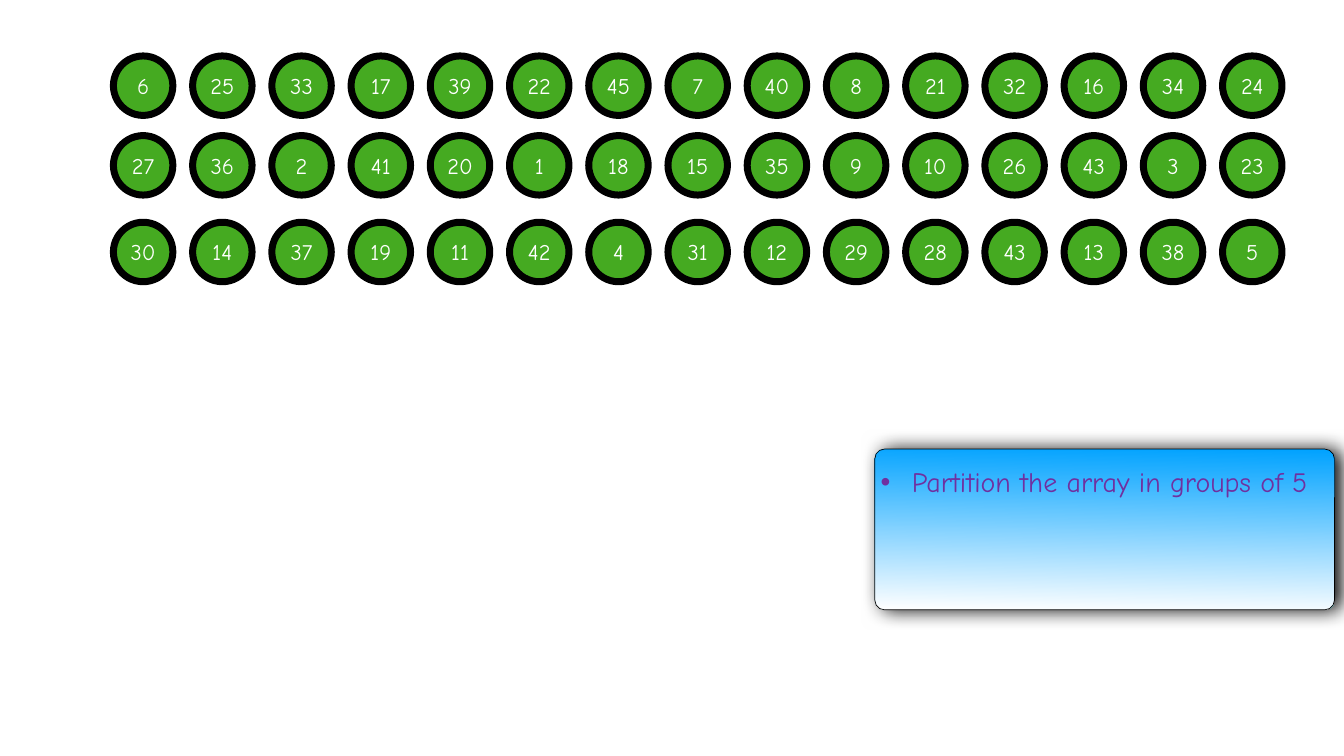
from lxml.etree import SubElement
from pptx import Presentation
from pptx.dml.color import RGBColor
from pptx.enum.shapes import MSO_SHAPE
from pptx.enum.text import MSO_ANCHOR, PP_ALIGN
from pptx.oxml.ns import qn
from pptx.util import Emu, Pt

SCALE = 9144  # EMU per px, 100 px to the inch
FONT = "Comic Neue"
COLOURS = {
    "circle": "45AA21",
    "outline": "000000",
    "number": "FFFFFF",
    "panel_top": "00A2FF",
    "panel_bottom": "FFFFFF",
    "note": "7030A0",
}
ROWS = [
    (111, [6, 25, 33, 17, 39, 22, 45, 7, 40, 8, 21, 32, 16, 34, 24]),
    (269, [27, 36, 2, 41, 20, 1, 18, 15, 35, 9, 10, 26, 43, 3, 23]),
    (441, [30, 14, 37, 19, 11, 42, 4, 31, 12, 29, 28, 43, 13, 38, 5]),
]


def px(length):
    return Emu(round(length * SCALE))


def colour(name):
    return RGBColor.from_string(COLOURS[name])


def add_outlined_shape(slide, kind, box, line_width):
    shape = slide.shapes.add_shape(kind, *map(px, box))
    shape.shadow.inherit = False
    shape.line.color.rgb = colour("outline")
    shape.line.width = Pt(line_width)
    frame = shape.text_frame
    frame.margin_left = frame.margin_right = px(6)
    frame.margin_top = frame.margin_bottom = px(6)
    frame.vertical_anchor = MSO_ANCHOR.MIDDLE
    return shape


def add_text(paragraph, text, size, colour_name, alignment):
    paragraph.alignment = alignment
    run = paragraph.add_run()
    run.text = text
    run.font.name = FONT
    run.font.size = Pt(size)
    run.font.color.rgb = colour(colour_name)


def add_number_row(slide, box, numbers):
    """Spread circles as tall as the box evenly over its width."""
    left, top, width, size = box
    pitch = (width - size) / (len(numbers) - 1)
    for index, number in enumerate(numbers):
        circle_box = (left + index * pitch, top, size, size)
        circle = add_outlined_shape(slide, MSO_SHAPE.OVAL, circle_box, 10)
        circle.fill.solid()
        circle.fill.fore_color.rgb = colour("circle")
        add_text(circle.text_frame.paragraphs[0], str(number), 32, "number",
                 PP_ALIGN.CENTER)


def add_panel_shadow(panel):
    effects = panel._element.spPr.find(qn("a:effectLst"))
    shadow = SubElement(effects, qn("a:outerShdw"), blurRad=str(Pt(28)),
                        dist=str(Pt(9)), dir="0", algn="ctr", rotWithShape="0")
    shade = SubElement(shadow, qn("a:srgbClr"), val=COLOURS["outline"])
    SubElement(shade, qn("a:alpha"), val="97000")


def add_note_panel(slide, box, text):
    panel = add_outlined_shape(slide, MSO_SHAPE.ROUNDED_RECTANGLE, box, 1)
    panel.adjustments[0] = 0.06
    add_panel_shadow(panel)

    # Vertical gradient
    panel.fill.gradient()
    panel.fill.gradient_angle = 269
    for stop, name in zip(panel.fill.gradient_stops, ("panel_top", "panel_bottom")):
        stop.color.rgb = colour(name)

    # Bulleted note, near the top of the panel
    frame = panel.text_frame
    frame.vertical_anchor = MSO_ANCHOR.TOP
    frame.margin_top = px(26)
    paragraph = frame.paragraphs[0]
    add_text(paragraph, text, 40, "note", PP_ALIGN.LEFT)
    properties = paragraph._p.get_or_add_pPr()
    properties.set("marL", str(px(62)))
    properties.set("indent", str(px(-62)))
    SubElement(properties, qn("a:buFont"), typeface="Arial")
    SubElement(properties, qn("a:buChar"), char="•")


def main():
    presentation = Presentation()
    presentation.slide_width = px(2667)
    presentation.slide_height = px(1500)
    slide = presentation.slides.add_slide(presentation.slide_layouts[6])

    # Array of numbers
    for top, numbers in ROWS:
        add_number_row(slide, (225, top, 2319, 118), numbers)

    # Step of the algorithm
    add_note_panel(slide, (1736, 891, 912, 319),
                   "Partition the array in groups of 5")

    presentation.save("out.pptx")


if __name__ == "__main__":
    main()
